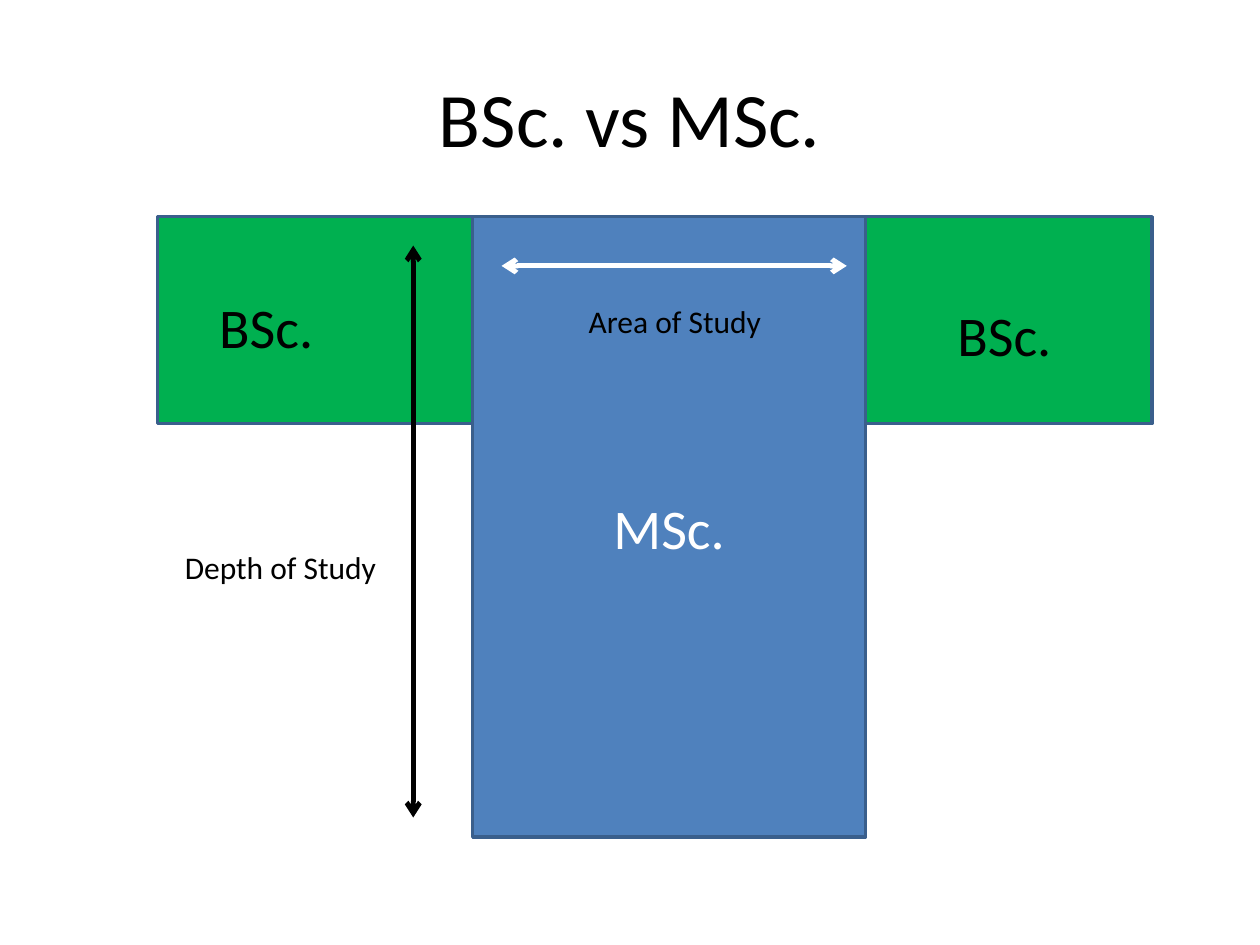
from dataclasses import dataclass

from lxml import etree
from pptx import Presentation
from pptx import util as u
from pptx.dml.color import RGBColor
from pptx.enum import shapes, text
from pptx.oxml.ns import qn

BLACK, WHITE = "000000", "FFFFFF"
GREEN, BLUE, EDGE = "00B050", "4F81BD", "3A5F8C"


@dataclass
class Box:
    left: float
    top: float
    width: float
    height: float

    def place(self) -> list:
        return [u.Cm(n) for n in (self.left, self.top, self.width, self.height)]


@dataclass
class Label:
    words: str
    box: Box
    size: int
    mid: bool = True


@dataclass
class Bar:
    box: Box
    fill: str
    words: str = ""


@dataclass
class Arrow:
    start: tuple[float, float]
    end: tuple[float, float]
    color: str


# The wide bar is broad and shallow, the tall one narrow and deep
BARS = [
    Bar(Box(3.18, 4.37, 20.04, 4.17), GREEN),
    Bar(Box(9.53, 4.37, 7.92, 12.5), BLUE, "MSc."),
]
ARROWS = [
    Arrow((10.11, 5.36), (17.07, 5.36), WHITE),
    Arrow((8.33, 16.48), (8.33, 4.95), BLACK),
]
LABELS = [
    Label("BSc. vs MSc.", Box(1.27, 0.76, 22.86, 3.18), 44),
    Label("Area of Study", Box(11.13, 5.77, 4.95, 1.4), 18),
    Label("Depth of Study", Box(3.18, 10.72, 4.95, 1.4), 18),
    Label("BSc.", Box(19.05, 5.94, 2.77, 1.62), 32, False),
    Label("BSc.", Box(4.17, 5.77, 2.77, 1.62), 32, False),
]


def rgb(code: str) -> RGBColor:
    return RGBColor.from_string(code)


def write(shape, words: str, size: int, color: str, mid: bool = True) -> None:
    frame = shape.text_frame
    frame.word_wrap = True
    frame.vertical_anchor = text.MSO_ANCHOR.MIDDLE if mid else text.MSO_ANCHOR.TOP
    para = frame.paragraphs[0]
    para.text = words
    para.alignment = text.PP_ALIGN.CENTER if mid else text.PP_ALIGN.LEFT
    para.font.name = "Calibri"
    para.font.size = u.Pt(size)
    para.font.color.rgb = rgb(color)


def draw_bar(slide, bar: Bar) -> None:
    shape = slide.shapes.add_shape(shapes.MSO_SHAPE.RECTANGLE, *bar.box.place())
    shape.shadow.inherit = False
    shape.fill.solid()
    shape.fill.fore_color.rgb = rgb(bar.fill)
    shape.line.color.rgb = rgb(EDGE)
    shape.line.width = u.Pt(2)
    if bar.words:
        write(shape, bar.words, 32, WHITE)


def draw_arrow(slide, arrow: Arrow) -> None:
    ends = [u.Cm(n) for n in arrow.start + arrow.end]
    link = slide.shapes.add_connector(shapes.MSO_CONNECTOR.STRAIGHT, *ends)
    link.line.color.rgb = rgb(arrow.color)
    link.line.width = u.Pt(2.75)
    line = link.line._get_or_add_ln()
    for tag in ("a:headEnd", "a:tailEnd"):
        etree.SubElement(line, qn(tag), type="arrow")
    etree.SubElement(link._element.spPr, qn("a:effectLst"))


def draw_label(slide, label: Label) -> None:
    shape = slide.shapes.add_textbox(*label.box.place())
    write(shape, label.words, label.size, BLACK, label.mid)


def main() -> None:
    deck = Presentation()
    deck.slide_width, deck.slide_height = u.Cm(25.4), u.Cm(19.05)
    slide = deck.slides.add_slide(deck.slide_layouts[6])
    for bar in BARS:
        draw_bar(slide, bar)
    for arrow in ARROWS:
        draw_arrow(slide, arrow)
    for label in LABELS:
        draw_label(slide, label)
    deck.save("out.pptx")


if __name__ == "__main__":
    main()
